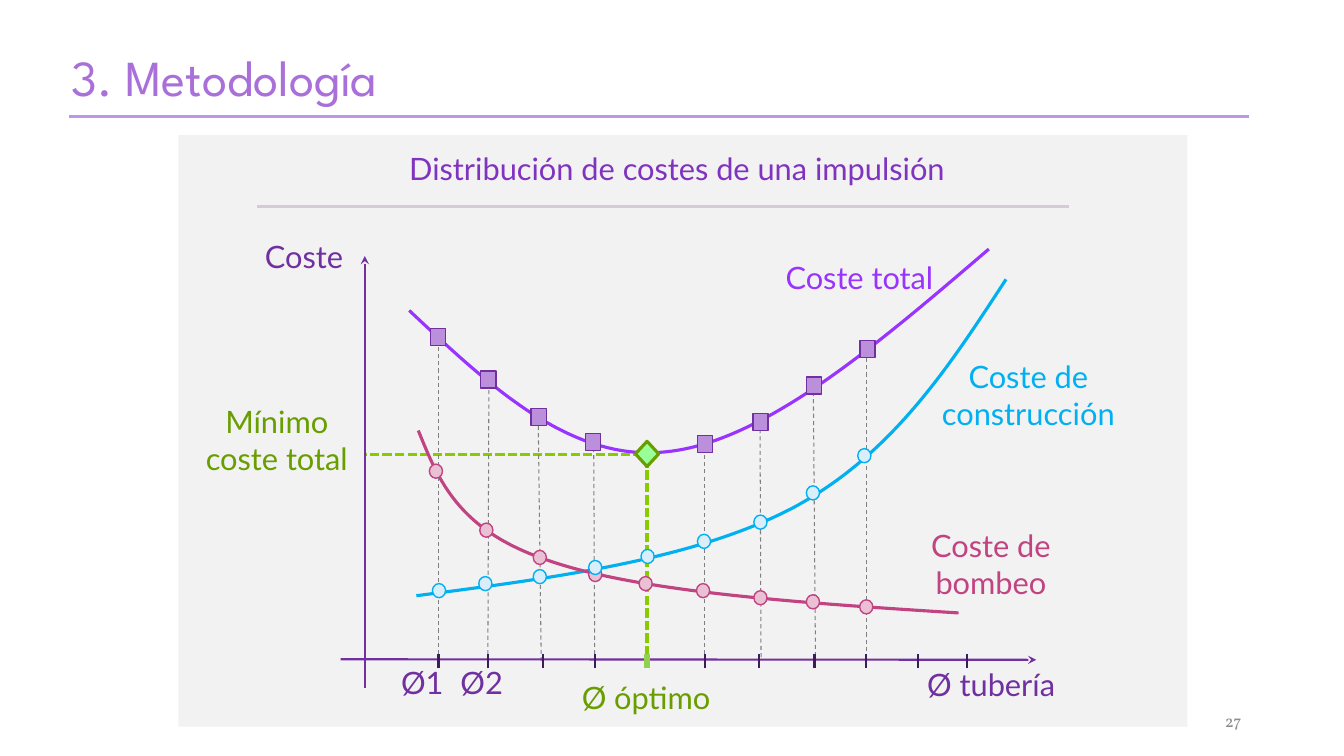
from lxml.etree import SubElement
from pptx import Presentation
from pptx.dml.color import RGBColor
from pptx.enum.dml import MSO_LINE
from pptx.enum.shapes import MSO_CONNECTOR, MSO_SHAPE
from pptx.enum.text import MSO_ANCHOR, MSO_AUTO_SIZE, PP_ALIGN
from pptx.oxml.ns import qn
from pptx.util import Pt

PANEL_GRAY = RGBColor(0xF2, 0xF2, 0xF2)
TITLE_PURPLE = RGBColor(0xAA, 0x70, 0xDA)
TITLE_RULE = RGBColor(0xBF, 0x95, 0xE8)
HEADING_PURPLE = RGBColor(0x80, 0x32, 0xC0)
HEADING_RULE = RGBColor(0xD5, 0xCB, 0xD7)
AXIS_PURPLE = RGBColor(0x70, 0x30, 0xA0)
TICK_PURPLE = RGBColor(0x40, 0x1B, 0x5B)
GUIDE_GRAY = RGBColor(0x80, 0x80, 0x80)
TOTAL_PURPLE = RGBColor(0x99, 0x33, 0xFF)
TOTAL_FILL = RGBColor(0xBC, 0x8F, 0xDD)
BUILDING_BLUE = RGBColor(0x00, 0xB0, 0xF0)
BUILDING_FILL = RGBColor(0xDA, 0xED, 0xFB)
PUMPING_PINK = RGBColor(0xC1, 0x43, 0x82)
PUMPING_FILL = RGBColor(0xEA, 0xC0, 0xD5)
OPTIMUM_DASH = RGBColor(0x88, 0xCC, 0x00)
OPTIMUM_TICK = RGBColor(0x92, 0xD0, 0x50)
OPTIMUM_GREEN = RGBColor(0x69, 0x9E, 0x00)
OPTIMUM_FILL = RGBColor(0x99, 0xFF, 0x99)
NUMBER_GRAY = RGBColor(0x8C, 0x8C, 0x8C)

DIAMETERS = [185.8, 221.1, 260.7, 297.4, 334.8, 376.5, 414.8, 454.4, 491.1, 528.5, 563.1]
OPTIMUM_X, OPTIMUM_Y = 334.8, 228.2
AXIS_X, AXIS_Y = 133.2, 374.8
TICK_TOP, TICK_BOTTOM = 370.8, 380.9

GUIDES = [
    ((185.8, 370.8), (185.8, 140.4)), ((221.1, 370.8), (221.8, 180.7)),
    ((259.2, 375.8), (257.1, 206.6)), ((297.4, 370.8), (296.7, 225.3)),
    ((375.9, 375.8), (375.9, 226.1)), ((416.2, 372.9), (415.5, 210.9)),
    ((455.1, 372.2), (453.6, 185)), ((491.8, 373.7), (491.8, 158.4)),
]
TOTAL_POINTS = [
    (185.4, 144.3), (221.4, 174.6), (257.4, 201.2), (296.3, 219.2),
    (376.2, 220.7), (415.8, 204.8), (454, 178.9), (492.2, 153),
]
PUMPING_POINTS = [
    (184, 240.1), (220, 282.2), (258.2, 301.7), (297.8, 313.9), (333.8, 320.4),
    (374.8, 325.4), (415.8, 330.5), (453.3, 333.4), (491.4, 337),
]
BUILDING_POINTS = [
    (186.2, 325.4), (219.3, 320.4), (258.2, 315.4), (297.8, 308.9), (335.2, 301),
    (375.5, 290.2), (415.8, 276.5), (453.3, 255.6), (490, 229),
]
CURVES = [
    (TOTAL_PURPLE, [(164.9, 125.3), (222.5, 179.3), (280.1, 234), (349.2, 226.1),
                    (418.3, 218.9), (498.3, 150.5), (578.9, 81.4)]),
    (BUILDING_BLUE, [(170, 329), (270, 316.1), (369.4, 303.1), (440, 265.7),
                     (510.5, 227.5), (550.8, 164.9), (591.2, 103)]),
    (PUMPING_PINK, [(171.4, 211), (185.8, 246.2), (199.4, 282.2), (264.2, 303.8),
                    (328.3, 326.2), (442.8, 334.1), (557.3, 341.3)]),
]
MARKERS = [
    (MSO_SHAPE.OVAL, PUMPING_POINTS, (9.4, 10.1), PUMPING_FILL, PUMPING_PINK, 1),
    (MSO_SHAPE.OVAL, BUILDING_POINTS, (9.4, 10.1), BUILDING_FILL, BUILDING_BLUE, 1),
    (MSO_SHAPE.RECTANGLE, TOTAL_POINTS, (10.8, 12.2), TOTAL_FILL, AXIS_PURPLE, 1),
    (MSO_SHAPE.DIAMOND, [(OPTIMUM_X, 227.7)], (16.6, 18), OPTIMUM_FILL, OPTIMUM_GREEN, 2.25),
]
LABELS = [
    ("Distribución de costes de una impulsión", (87.9, 6.9, 536.4, 33.9), HEADING_PURPLE, PP_ALIGN.CENTER),
    ("Coste", (54.8, 69.8, 122.4, 33.9), AXIS_PURPLE, PP_ALIGN.LEFT),
    ("Ø1", (152, 374.4, 75.6, 33.9), AXIS_PURPLE, PP_ALIGN.LEFT),
    ("Ø2", (194.4, 374.4, 75.6, 33.9), AXIS_PURPLE, PP_ALIGN.LEFT),
    ("Ø tubería", (527.8, 375.5, 182.2, 33.9), AXIS_PURPLE, PP_ALIGN.LEFT),
    ("Ø óptimo", (273.6, 384.5, 121, 33.9), OPTIMUM_GREEN, PP_ALIGN.CENTER),
    ("Mínimo coste total", (0.8, 187.6, 139, 60.5), OPTIMUM_GREEN, PP_ALIGN.CENTER),
    ("Coste total", (422, 84.9, 128.9, 33.9), TOTAL_PURPLE, PP_ALIGN.CENTER),
    ("Coste de construcción", (515.3, 155.5, 183.6, 60.5), BUILDING_BLUE, PP_ALIGN.CENTER),
    ("Coste de bombeo", (501.9, 276.1, 157, 60.5), PUMPING_PINK, PP_ALIGN.CENTER),
]


def write_text(shape, text, *, size, font, color, align=PP_ALIGN.LEFT,
               anchor=MSO_ANCHOR.TOP, spacing=None):
    frame = shape.text_frame
    frame.word_wrap = True
    frame.auto_size = MSO_AUTO_SIZE.NONE
    frame.vertical_anchor = anchor
    paragraph = frame.paragraphs[0]
    paragraph.alignment = align
    paragraph.line_spacing = spacing
    run = paragraph.add_run()
    run.text = text
    run.font.size = Pt(size)
    run.font.name = font
    run.font.color.rgb = color


def add_line(slide, start, end, color, width, dash=None, arrow=False):
    connector = slide.shapes.add_connector(
        MSO_CONNECTOR.STRAIGHT, *(Pt(value) for value in (*start, *end)))
    connector.line.color.rgb = color
    connector.line.width = Pt(width)
    if dash:
        connector.line.dash_style = dash
    properties = connector._element.spPr
    if arrow:
        SubElement(properties.find(qn("a:ln")), qn("a:tailEnd"), type="stealth")
    SubElement(properties, qn("a:effectLst"))


def add_preset(slide, kind, box, fill, outline=None, width=1):
    shape = slide.shapes.add_shape(kind, *(Pt(value) for value in box))
    shape.shadow.inherit = False
    shape.fill.solid()
    shape.fill.fore_color.rgb = fill
    if outline is None:
        shape.line.fill.background()
    else:
        shape.line.color.rgb = outline
        shape.line.width = Pt(width)


def add_curve(slide, controls, color):
    points = [(Pt(x), Pt(y)) for x, y in controls]
    builder = slide.shapes.build_freeform(*points[0])
    builder.add_line_segments(points[3::3], close=False)
    shape = builder.convert_to_shape()
    for index, segment in enumerate(list(shape._element.iter(qn("a:lnTo")))):
        segment.tag = qn("a:cubicBezTo")
        segment.clear()
        for x, y in points[3 * index + 1:3 * index + 4]:
            SubElement(segment, qn("a:pt"), x=str(x - shape.left), y=str(y - shape.top))
    shape.shadow.inherit = False
    shape.fill.background()
    shape.line.color.rgb = color
    shape.line.width = Pt(2.25)


def add_header(slide, left, top, width, height):
    title = slide.shapes.title
    title.left, title.top, title.width, title.height = map(Pt, (left, top, width, height))
    write_text(title, "3. Metodología", size=36, font="League Spartan",
               color=TITLE_PURPLE, anchor=MSO_ANCHOR.MIDDLE, spacing=0.9)
    add_line(slide, (left + 5.8, top + 78.5), (left + 848.5, top + 78.5), TITLE_RULE, 2.25)


def add_cost_diagram(slide, left, top, width, height):
    def at(x, y):
        return left + x, top + y

    add_preset(slide, MSO_SHAPE.RECTANGLE, (left, top, width, height), PANEL_GRAY)
    add_line(slide, at(56.2, 51.1), at(636.5, 51.1), HEADING_RULE, 2.25)
    for start, end in (((OPTIMUM_X, 371.5), (OPTIMUM_X, 236.9)),
                       ((340.6, OPTIMUM_Y), (AXIS_X, OPTIMUM_Y))):
        add_line(slide, at(*start), at(*end), OPTIMUM_DASH, 2.25, MSO_LINE.SQUARE_DOT)
    for color, controls in CURVES:
        add_curve(slide, [at(*point) for point in controls], color)

    for start, end in GUIDES:
        add_line(slide, at(*start), at(*end), GUIDE_GRAY, 0.75, MSO_LINE.DASH)
    add_line(slide, at(AXIS_X, 394.6), at(AXIS_X, 86.4), AXIS_PURPLE, 1.5, arrow=True)
    add_line(slide, at(116, 374.4), at(612.8, AXIS_Y), AXIS_PURPLE, 1.5, arrow=True)
    for x in DIAMETERS:
        color, weight = (OPTIMUM_TICK, 4.5) if x == OPTIMUM_X else (TICK_PURPLE, 1.5)
        add_line(slide, at(x, TICK_BOTTOM), at(x, TICK_TOP), color, weight)

    for kind, points, (wide, high), fill, outline, weight in MARKERS:
        for x, y in points:
            box = (*at(x - wide / 2, y - high / 2), wide, high)
            add_preset(slide, kind, box, fill, outline, weight)
    for text, (x, y, wide, high), color, align in LABELS:
        label = slide.shapes.add_textbox(*map(Pt, (*at(x, y), wide, high)))
        write_text(label, text, size=22, font="Lato", color=color, align=align)


def add_slide_number(slide, left, top, width, height):
    box = slide.shapes.add_textbox(*map(Pt, (left, top, width, height)))
    write_text(box, "27", size=12, font="Vollkorn", color=NUMBER_GRAY,
               align=PP_ALIGN.RIGHT, anchor=MSO_ANCHOR.MIDDLE)


def main():
    presentation = Presentation()
    presentation.slide_width, presentation.slide_height = Pt(960), Pt(540)
    slide = presentation.slides.add_slide(presentation.slide_layouts[5])
    add_header(slide, 43.6, 5, 828, 104.4)
    add_cost_diagram(slide, 127.4, 96.5, 720.7, 422.6)
    add_slide_number(slide, 678, 500.4, 216, 28.8)
    presentation.save("out.pptx")


if __name__ == "__main__":
    main()
